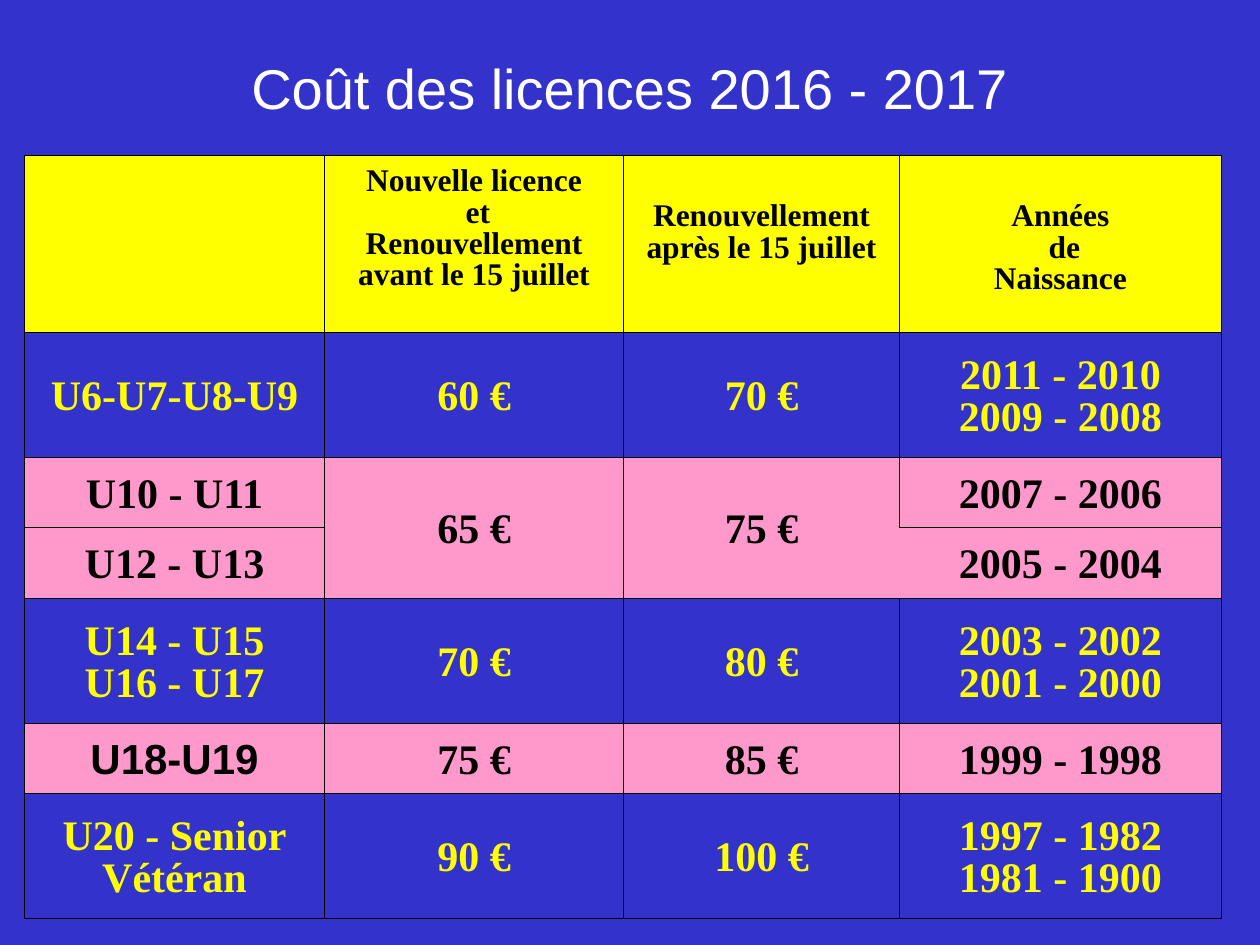
from lxml import etree
from pptx import Presentation
from pptx import util as u
from pptx.dml import color
from pptx.enum import text
from pptx.oxml import ns

COLORS = {"blue": "3333CC", "yellow": "FFFF00", "pink": "FF99CC", "black": "000000", "white": "FFFFFF"}
NO_STYLE = "{2D5ABB26-0587-4C30-8999-92F81FD0307C}"


def rgb(name):
    return color.RGBColor.from_string(COLORS[name])


def add_border(cell, side, visible):
    line = etree.SubElement(cell._tc.get_or_add_tcPr(), ns.qn(f"a:ln{side}"), w=str(u.Pt(0.45)))
    if visible:
        fill = etree.SubElement(line, ns.qn("a:solidFill"))
        etree.SubElement(fill, ns.qn("a:srgbClr"), val=COLORS["black"])
    else:
        etree.SubElement(line, ns.qn("a:noFill"))


presentation = Presentation()
presentation.slide_width, presentation.slide_height = u.Pt(720), u.Pt(540)
slide = presentation.slides.add_slide(presentation.slide_layouts[5])
slide.background.fill.solid()
slide.background.fill.fore_color.rgb = rgb("blue")

title = slide.shapes.title
title.left, title.top, title.width, title.height = u.Pt(36), u.Pt(8), u.Pt(648), u.Pt(84)
title.text_frame.text = "Coût des licences 2016 - 2017"
title.text_frame.vertical_anchor = text.MSO_ANCHOR.MIDDLE
paragraph = title.text_frame.paragraphs[0]
paragraph.alignment = text.PP_ALIGN.CENTER
paragraph.font.name, paragraph.font.size = "Arial", u.Pt(32)
paragraph.font.color.rgb = rgb("white")

column_widths = [171.4, 171, 157.6, 184]
row_heights = [101.3, 71.4, 40.2, 40.4, 71.4, 40.2, 71.4]
row_fills = ["yellow", None, "pink", "pink", None, "pink", None]
rows = [
    ["", "Nouvelle licence\n et\nRenouvellement avant le 15 juillet",
     "Renouvellement\naprès le 15 juillet", "Années\n de\nNaissance"],
    ["U6-U7-U8-U9", "60 €", "70 €", "2011 - 2010\v2009 - 2008"],
    ["U10 - U11", "65 €", "75 €", "2007 - 2006"],
    ["U12 - U13", "", "", "2005 - 2004"],
    ["U14 - U15\vU16 - U17", "70 €", "80 €", "2003 - 2002\n2001 - 2000"],
    ["U18-U19", "75 €", "85 €", "1999 - 1998"],
    ["U20 - Senior\nVétéran", "90 €", "100 €", "1997 - 1982\v1981 - 1900"],
]
open_sides = {(2, 2): "R", (3, 2): "R", (3, 3): "L"}

frame = slide.shapes.add_table(len(rows), len(column_widths), u.Pt(14), u.Pt(88.7),
                               u.Pt(sum(column_widths)), u.Pt(sum(row_heights)))
table = frame.table
table.first_row = table.horz_banding = False
table._tbl.tblPr.find(ns.qn("a:tableStyleId")).text = NO_STYLE
for column, width in zip(table.columns, column_widths):
    column.width = u.Pt(width)
for row, height in zip(table.rows, row_heights):
    row.height = u.Pt(height)
for column_index in (1, 2):
    table.cell(2, column_index).merge(table.cell(3, column_index))

for row_index, (values, fill) in enumerate(zip(rows, row_fills)):
    is_header = row_index == 0
    for column_index, value in enumerate(values):
        cell = table.cell(row_index, column_index)
        for side in "LRTB":
            add_border(cell, side, open_sides.get((row_index, column_index)) != side)
        if fill:
            cell.fill.solid()
            cell.fill.fore_color.rgb = rgb(fill)
        else:
            cell.fill.background()
        if not value:
            continue
        cell.text = value
        cell.margin_top, cell.margin_bottom = u.Pt(7.2), u.Pt(3.6)
        cell.vertical_anchor = text.MSO_ANCHOR.MIDDLE
        if is_header:
            cell.vertical_anchor = text.MSO_ANCHOR.TOP
            cell.margin_top = u.Pt(6.5 if column_index == 1 else 26.5)
        for paragraph in cell.text_frame.paragraphs:
            paragraph.alignment = text.PP_ALIGN.CENTER
            paragraph.line_spacing = 0.9
            paragraph.font.name = "Arial" if value == "U18-U19" else "Times New Roman"
            paragraph.font.size = u.Pt(18 if is_header else 24)
            paragraph.font.bold = True
            paragraph.font.color.rgb = rgb("black" if fill else "yellow")

presentation.save("out.pptx")
